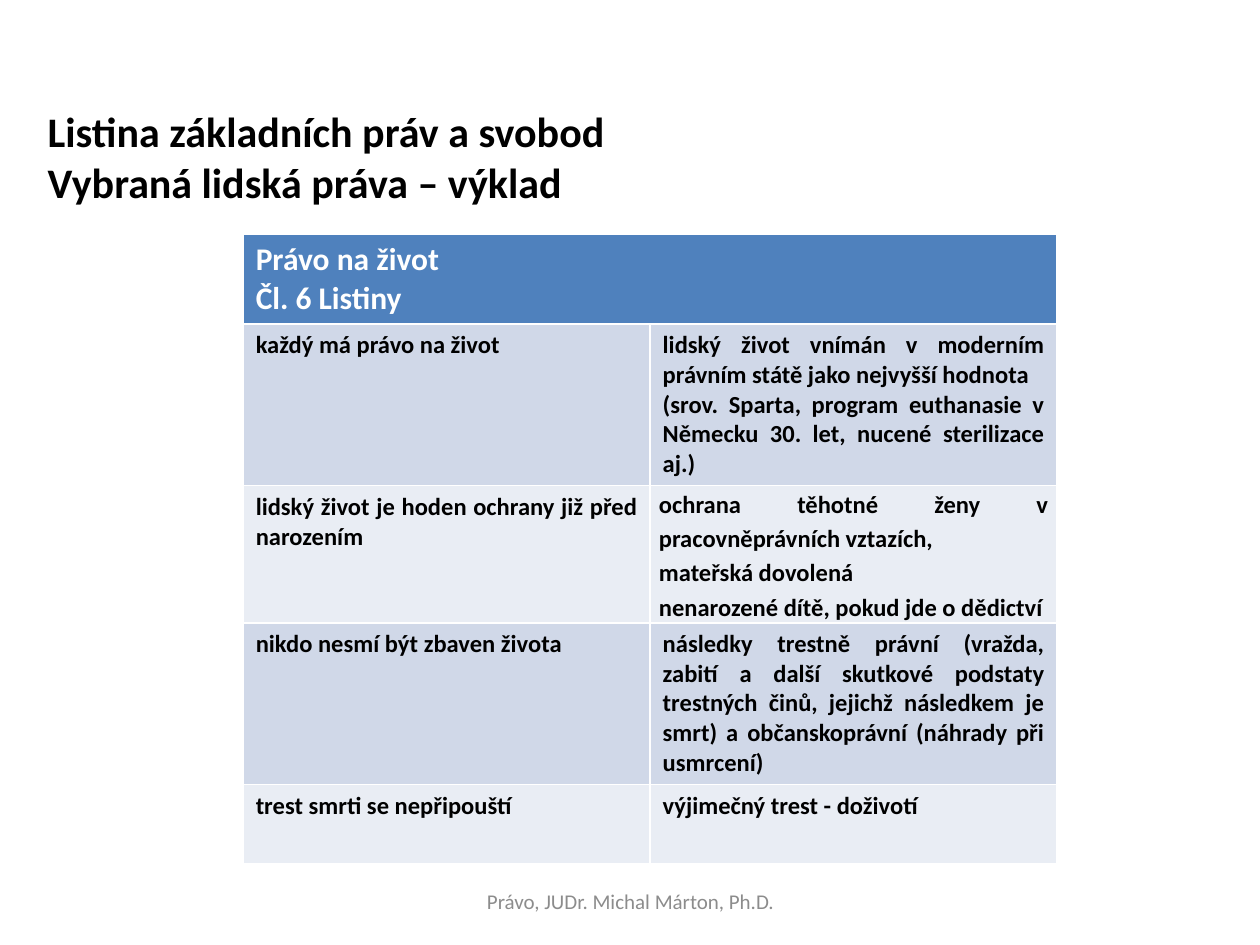
from pptx import Presentation
from pptx.dml.color import RGBColor
from pptx.enum.text import MSO_ANCHOR, MSO_AUTO_SIZE, PP_ALIGN
from pptx.util import Inches, Pt

TITLE = ["Listina základních práv a svobod", "Vybraná lidská práva – výklad"]
FOOTER = ["Právo, JUDr. Michal Márton, Ph.D."]
HEADER = ["Právo na život", "Čl. 6 Listiny"]
ROWS = [
    (["každý má právo na život"],
     ["lidský život vnímán v moderním právním státě jako nejvyšší hodnota",
      "(srov. Sparta, program euthanasie v Německu 30. let, nucené sterilizace aj.)"]),
    (["lidský život je hoden ochrany již před narozením"],
     ["ochrana těhotné ženy v pracovněprávních vztazích,",
      "mateřská dovolená",
      "nenarozené dítě, pokud jde o dědictví"]),
    (["nikdo nesmí být zbaven života"],
     ["následky trestně právní (vražda, zabití a další skutkové podstaty trestných činů, "
      "jejichž následkem je smrt) a občanskoprávní (náhrady při usmrcení)"]),
    (["trest smrti se nepřipouští"], ["výjimečný trest - doživotí"]),
]

COLORS = {"black": "000000", "white": "FFFFFF", "grey": "8C8C8C",
          "header": "4F81BD", "odd": "D0D8E8", "even": "E9EDF4"}
FORMATS = {
    "title": {"size": 24, "bold": True, "color": "black", "align": PP_ALIGN.LEFT},
    "header": {"size": 18, "bold": True, "color": "white", "align": PP_ALIGN.LEFT},
    "body": {"size": 14, "bold": True, "color": "black", "align": PP_ALIGN.JUSTIFY},
    "footer": {"size": 12, "bold": False, "color": "grey", "align": PP_ALIGN.CENTER},
}
WIDTH, HEIGHT = 10, 7.5
COL_W, ROW_H = 3.23, 0.63
TABLE_LEFT, TABLE_TOP = 1.93, 1.86
LOOSE_CELL = (2, 1)  # wider line spacing and tighter margins


def rgb(name):
    return RGBColor.from_string(COLORS[name])


def write(tf, lines, style, spacing=None):
    fmt = FORMATS[style]
    for i, line in enumerate(lines):
        p = tf.add_paragraph() if i else tf.paragraphs[0]
        p.alignment = fmt["align"]
        p.line_spacing = spacing
        r = p.add_run()
        r.text = line
        for name, value in {"name": "Calibri", "size": Pt(fmt["size"]),
                            "bold": fmt["bold"]}.items():
            setattr(r.font, name, value)
        r.font.color.rgb = rgb(fmt["color"])


def add_text(s, box, lines, style, anchor=MSO_ANCHOR.TOP):
    tf = s.shapes.add_textbox(*map(Inches, box)).text_frame
    tf.word_wrap = True
    tf.auto_size = MSO_AUTO_SIZE.NONE
    tf.vertical_anchor = anchor
    write(tf, lines, style)


def fill_cell(cell, lines, style, fill, spacing=None):
    cell.fill.solid()
    cell.fill.fore_color.rgb = rgb(fill)
    write(cell.text_frame, lines, style, spacing)


def add_rights_table(s):
    n = len(ROWS) + 1
    table = s.shapes.add_table(n, 2, *map(Inches, (
        TABLE_LEFT, TABLE_TOP, 2 * COL_W, n * ROW_H))).table
    table.cell(0, 0).merge(table.cell(0, 1))
    fill_cell(table.cell(0, 0), HEADER, "header", "header")
    for i, row in enumerate(ROWS, start=1):
        for j, lines in enumerate(row):
            loose = (i, j) == LOOSE_CELL
            fill_cell(table.cell(i, j), lines, "body", "odd" if i % 2 else "even",
                      1.15 if loose else None)
    cell = table.cell(*LOOSE_CELL)
    for side, inset in {"left": 0.07, "top": 0, "right": 0.07, "bottom": 0}.items():
        setattr(cell, f"margin_{side}", Inches(inset))


def main():
    prs = Presentation()
    prs.slide_width, prs.slide_height = Inches(WIDTH), Inches(HEIGHT)
    s = prs.slides.add_slide(prs.slide_layouts[6])
    add_text(s, (3.42, 6.95, 3.17, 0.4), FOOTER, "footer", MSO_ANCHOR.MIDDLE)
    add_text(s, (0.28, 0.79, 9.45, 3.03), TITLE, "title")
    add_rights_table(s)
    prs.save("out.pptx")


if __name__ == "__main__":
    main()
